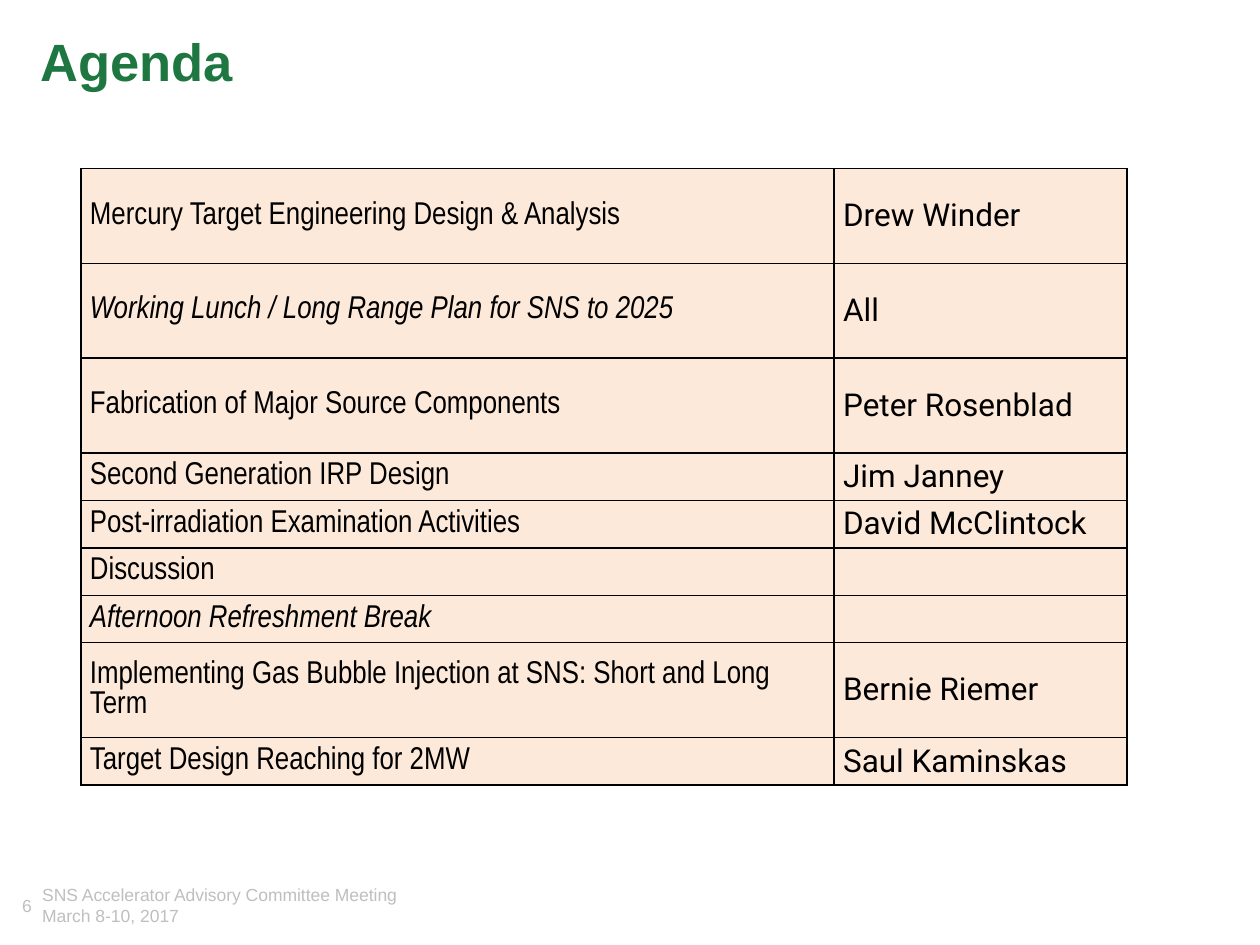
from lxml.etree import SubElement
from pptx import Presentation
from pptx.dml.color import RGBColor
from pptx.enum.text import MSO_ANCHOR as Anchor, MSO_AUTO_SIZE as AutoSize, PP_ALIGN as Align
from pptx.oxml.ns import qn
from pptx.util import Pt

GREEN, GREY, BLACK, PEACH = "1E7640", "BFBFBF", "000000", "FDE9D9"
TALL, SHORT = 54.2, 27.1
AGENDA = [  # topic, speaker, row height, italic topic
    ("Mercury Target Engineering Design & Analysis", "Drew Winder", TALL, False),
    ("Working Lunch / Long Range Plan for SNS to 2025", "All", TALL, True),
    ("Fabrication of Major Source Components", "Peter Rosenblad", TALL, False),
    ("Second Generation IRP Design", "Jim Janney", SHORT, False),
    ("Post-irradiation Examination Activities", "David McClintock", SHORT, False),
    ("Discussion", "", SHORT, False),
    ("Afternoon Refreshment Break", "", SHORT, True),
    ("Implementing Gas Bubble Injection at SNS: Short and Long Term",
     "Bernie Riemer", TALL, False),
    ("Target Design Reaching for 2MW", "Saul Kaminskas", SHORT, False),
]


def color(hex_text):
    return RGBColor.from_string(hex_text)


def write(frame, text, size=18, font="Arial", fill=BLACK, bold=False, italic=False,
          align=Align.LEFT, spacing=None):
    paragraph = frame.paragraphs[0]
    paragraph.alignment = align
    paragraph.line_spacing = spacing
    run = paragraph.add_run()
    run.text = text
    run.font.name, run.font.size = font, Pt(size)
    run.font.bold, run.font.italic = bold, italic
    run.font.color.rgb = color(fill)


def set_margins(target, side, vertical):
    target.margin_left = target.margin_right = Pt(side)
    target.margin_top = target.margin_bottom = Pt(vertical)


def set_borders(cell, width, hex_text):
    properties = cell._tc.get_or_add_tcPr()
    for position, side in enumerate(("a:lnL", "a:lnR", "a:lnT", "a:lnB")):
        line = SubElement(properties, qn(side), w=str(Pt(width)))
        solid = SubElement(line, qn("a:solidFill"))
        SubElement(solid, qn("a:srgbClr"), val=hex_text)
        properties.insert(position, line)  # borders precede the cell fill


class SlideBuilder:
    def __init__(self, slide):
        self.slide = slide
        self.border_width = 1
        self.cell_margin = 5.2

    def title(self, text, left, top, width, height):
        title = self.slide.shapes.title
        title.left, title.top, title.width, title.height = map(Pt, (left, top, width, height))
        frame = title.text_frame
        frame.word_wrap = True
        frame.auto_size = AutoSize.SHAPE_TO_FIT_TEXT
        frame.vertical_anchor = Anchor.TOP
        set_margins(frame, 7.2, 3.6)
        write(frame, text, size=30, fill=GREEN, bold=True, spacing=0.85)

    def text(self, text, left, top, width, height, margins=(7.2, 3.6),
             anchor=Anchor.MIDDLE, **style):
        box = self.slide.shapes.add_textbox(*map(Pt, (left, top, width, height)))
        frame = box.text_frame
        frame.word_wrap = True
        frame.vertical_anchor = anchor
        set_margins(frame, *margins)
        write(frame, text, **style)

    def agenda(self, rows, left, top, widths):
        height = sum(row[2] for row in rows)
        table = self.slide.shapes.add_table(
            len(rows), len(widths), *map(Pt, (left, top, sum(widths), height))).table
        table.first_row = table.horz_banding = False
        for column, width in zip(table.columns, widths):
            column.width = Pt(width)
        for index, (topic, speaker, row_height, italic) in enumerate(rows):
            table.rows[index].height = Pt(row_height)
            self.cell(table.cell(index, 0), topic, font="Arial Narrow", italic=italic)
            self.cell(table.cell(index, 1), speaker, font="Roboto")

    def cell(self, cell, text, **style):
        cell.fill.solid()
        cell.fill.fore_color.rgb = color(PEACH)
        cell.vertical_anchor = Anchor.MIDDLE
        set_margins(cell, self.cell_margin, 0)
        set_borders(cell, self.border_width, BLACK)
        if text:
            write(cell.text_frame, text, **style)


def main():
    presentation = Presentation()
    presentation.slide_width, presentation.slide_height = Pt(720), Pt(540)
    builder = SlideBuilder(presentation.slides.add_slide(presentation.slide_layouts[5]))
    builder.title("Agenda", 16, 18.7, 680, 38.2)
    builder.agenda(AGENDA, 46.2, 96.3, (430.4, 167.5))
    builder.text("6", 1.5, 512.6, 16.6, 12.2, margins=(0, 0), anchor=Anchor.TOP,
                 size=10, fill=GREY, align=Align.RIGHT, spacing=0.9)
    builder.text("SNS Accelerator Advisory Committee Meeting March 8-10, 2017",
                 17, 510, 228, 14.4, size=10, fill=GREY)
    presentation.save("out.pptx")


if __name__ == "__main__":
    main()
